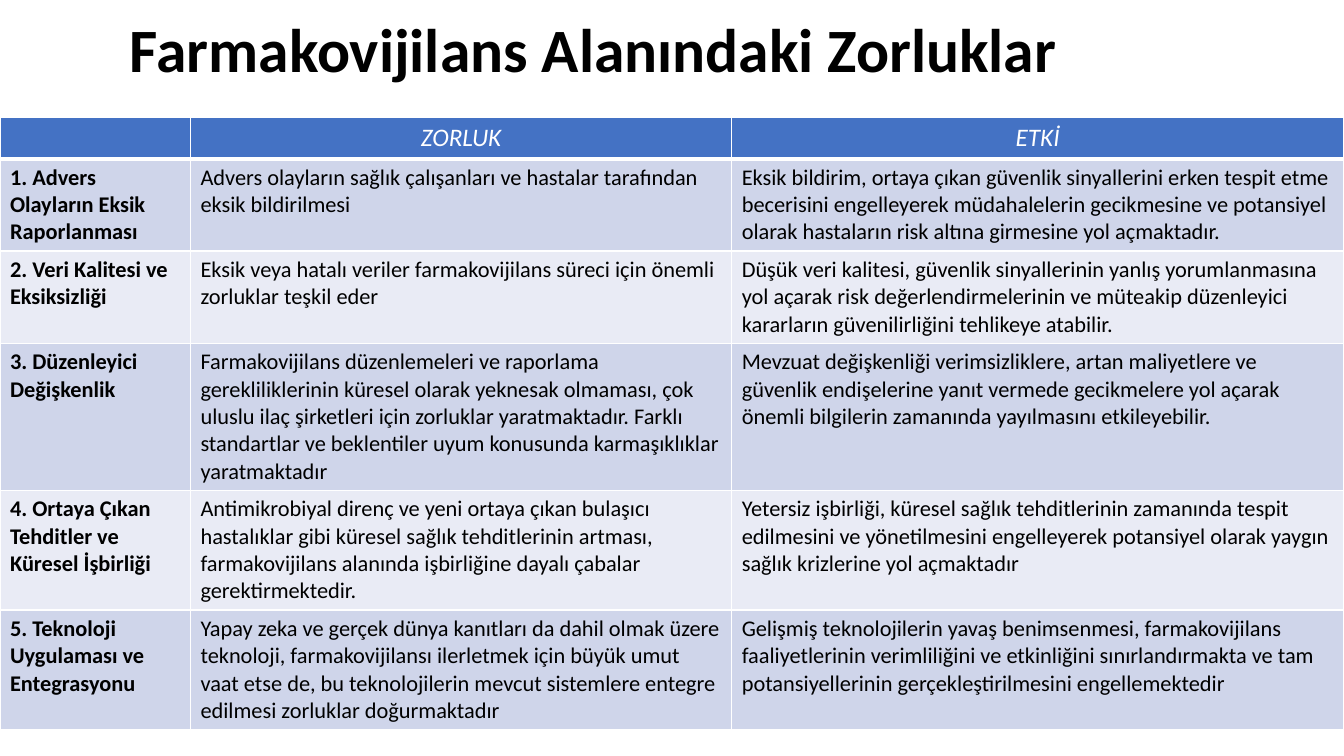
"""Builds a slide with a table of pharmacovigilance challenges and their effects."""
from lxml import etree
from pptx import Presentation
from pptx.dml.color import RGBColor
from pptx.enum.text import MSO_ANCHOR, MSO_AUTO_SIZE, PP_ALIGN
from pptx.oxml.ns import qn
from pptx.util import Cm, Pt

CENTER, LEFT = PP_ALIGN.CENTER, PP_ALIGN.LEFT
MIDDLE = MSO_ANCHOR.MIDDLE
NO_AUTOFIT = MSO_AUTO_SIZE.NONE
TITLE_ONLY = 5

COLUMN_WIDTHS = [4.8, 13.64, 15.42]
ROW_HEIGHTS = [0.81, 1.98, 2.06, 3.18, 2.59, 2.97]
HEADINGS = ["", "ZORLUK", "ETKİ"]
CHALLENGES = [
    ("1. Advers Olayların Eksik Raporlanması",
     "Advers olayların sağlık çalışanları ve hastalar tarafından eksik bildirilmesi",
     "Eksik bildirim, ortaya çıkan güvenlik sinyallerini erken tespit etme becerisini "
     "engelleyerek müdahalelerin gecikmesine ve potansiyel olarak hastaların risk altına "
     "girmesine yol açmaktadır."),
    ("2. Veri Kalitesi ve Eksiksizliği",
     "Eksik veya hatalı veriler farmakovijilans süreci için önemli zorluklar teşkil eder",
     "Düşük veri kalitesi, güvenlik sinyallerinin yanlış yorumlanmasına yol açarak risk "
     "değerlendirmelerinin ve müteakip düzenleyici kararların güvenilirliğini tehlikeye "
     "atabilir."),
    ("3. Düzenleyici Değişkenlik",
     "Farmakovijilans düzenlemeleri ve raporlama gerekliliklerinin küresel olarak yeknesak "
     "olmaması, çok uluslu ilaç şirketleri için zorluklar yaratmaktadır. Farklı standartlar "
     "ve beklentiler uyum konusunda karmaşıklıklar yaratmaktadır",
     "Mevzuat değişkenliği verimsizliklere, artan maliyetlere ve güvenlik endişelerine yanıt "
     "vermede gecikmelere yol açarak önemli bilgilerin zamanında yayılmasını etkileyebilir."),
    ("4. Ortaya Çıkan Tehditler ve Küresel İşbirliği",
     "Antimikrobiyal direnç ve yeni ortaya çıkan bulaşıcı hastalıklar gibi küresel sağlık "
     "tehditlerinin artması, farmakovijilans alanında işbirliğine dayalı çabalar "
     "gerektirmektedir.",
     "Yetersiz işbirliği, küresel sağlık tehditlerinin zamanında tespit edilmesini ve "
     "yönetilmesini engelleyerek potansiyel olarak yaygın sağlık krizlerine yol açmaktadır"),
    ("5. Teknoloji Uygulaması ve Entegrasyonu",
     "Yapay zeka ve gerçek dünya kanıtları da dahil olmak üzere teknoloji, farmakovijilansı "
     "ilerletmek için büyük umut vaat etse de, bu teknolojilerin mevcut sistemlere entegre "
     "edilmesi zorluklar doğurmaktadır",
     "Gelişmiş teknolojilerin yavaş benimsenmesi, farmakovijilans faaliyetlerinin "
     "verimliliğini ve etkinliğini sınırlandırmakta ve tam potansiyellerinin "
     "gerçekleştirilmesini engellemektedir"),
]


def color(code):
    """Turn a hex string into a colour."""
    return RGBColor.from_string(code)


class SlideBuilder:
    """Holds the style and the current slide."""

    font = "Calibri"
    ink = "000000"
    paper = "FFFFFF"
    header_fill = "4472C4"
    band_fills = ("CFD5EA", "E9EBF5")

    def __init__(self, deck):
        """Add a title-only slide to the deck."""
        self.page = deck.slides.add_slide(deck.slide_layouts[TITLE_ONLY])

    def add_span(self, para, text, size, ink, bold=False, italic=False):
        """Add one formatted run to a paragraph."""
        span = para.add_run()
        span.text = text
        span.font.name = self.font
        span.font.size = Pt(size)
        span.font.bold = bold
        span.font.italic = italic
        span.font.color.rgb = color(ink)

    def title(self, text, left, top, width, height):
        """Place and fill the title placeholder."""
        box = self.page.shapes.title
        box.left, box.top, box.width, box.height = map(Cm, (left, top, width, height))
        frame = box.text_frame
        frame.auto_size = NO_AUTOFIT
        frame.word_wrap = True
        frame.vertical_anchor = MIDDLE
        para = frame.paragraphs[0]
        para.alignment = LEFT
        para.line_spacing = 0.9
        self.add_span(para, text, 44, self.ink, bold=True)

    def borders(self, cell, bottom):
        """Draw the cell borders, with a chosen width in points at the bottom."""
        properties = cell._tc.get_or_add_tcPr()
        for side, width in (("L", 1), ("R", 1), ("T", 1), ("B", bottom)):
            line = etree.SubElement(properties, qn(f"a:ln{side}"), w=str(Pt(width)))
            fill = etree.SubElement(line, qn("a:solidFill"))
            etree.SubElement(fill, qn("a:srgbClr"), val=self.paper)

    def cell(self, cell, text, row, column):
        """Format one table cell by its row and column."""
        header = row == 0
        self.borders(cell, 3 if header else 1)
        cell.fill.solid()
        cell.fill.fore_color.rgb = color(
            self.header_fill if header else self.band_fills[(row - 1) % 2])
        para = cell.text_frame.paragraphs[0]
        para.alignment = CENTER if header else LEFT
        if header and text:
            self.add_span(para, text, 18, self.paper, italic=True)
        elif text:
            self.add_span(para, text, 16, self.ink, bold=column == 0)

    def table(self, rows, widths, heights, left, top):
        """Add a table with a header row and banded rows."""
        table = self.page.shapes.add_table(
            len(rows), len(widths), Cm(left), Cm(top),
            Cm(sum(widths)), Cm(sum(heights))).table
        for column, width in zip(table.columns, widths):
            column.width = Cm(width)
        for row, height in zip(table.rows, heights):
            row.height = Cm(height)
        for row, texts in enumerate(rows):
            for column, text in enumerate(texts):
                self.cell(table.cell(row, column), text, row, column)


def main():
    """Build and save the deck."""
    deck = Presentation()
    deck.slide_width, deck.slide_height = Cm(33.87), Cm(19.05)
    builder = SlideBuilder(deck)
    builder.title("Farmakovijilans Alanındaki Zorluklar", 3.02, 0.58, 28.5, 1.47)
    builder.table([HEADINGS, *CHALLENGES], COLUMN_WIDTHS, ROW_HEIGHTS, 0, 2.97)
    deck.save("out.pptx")


if __name__ == "__main__":
    main()
